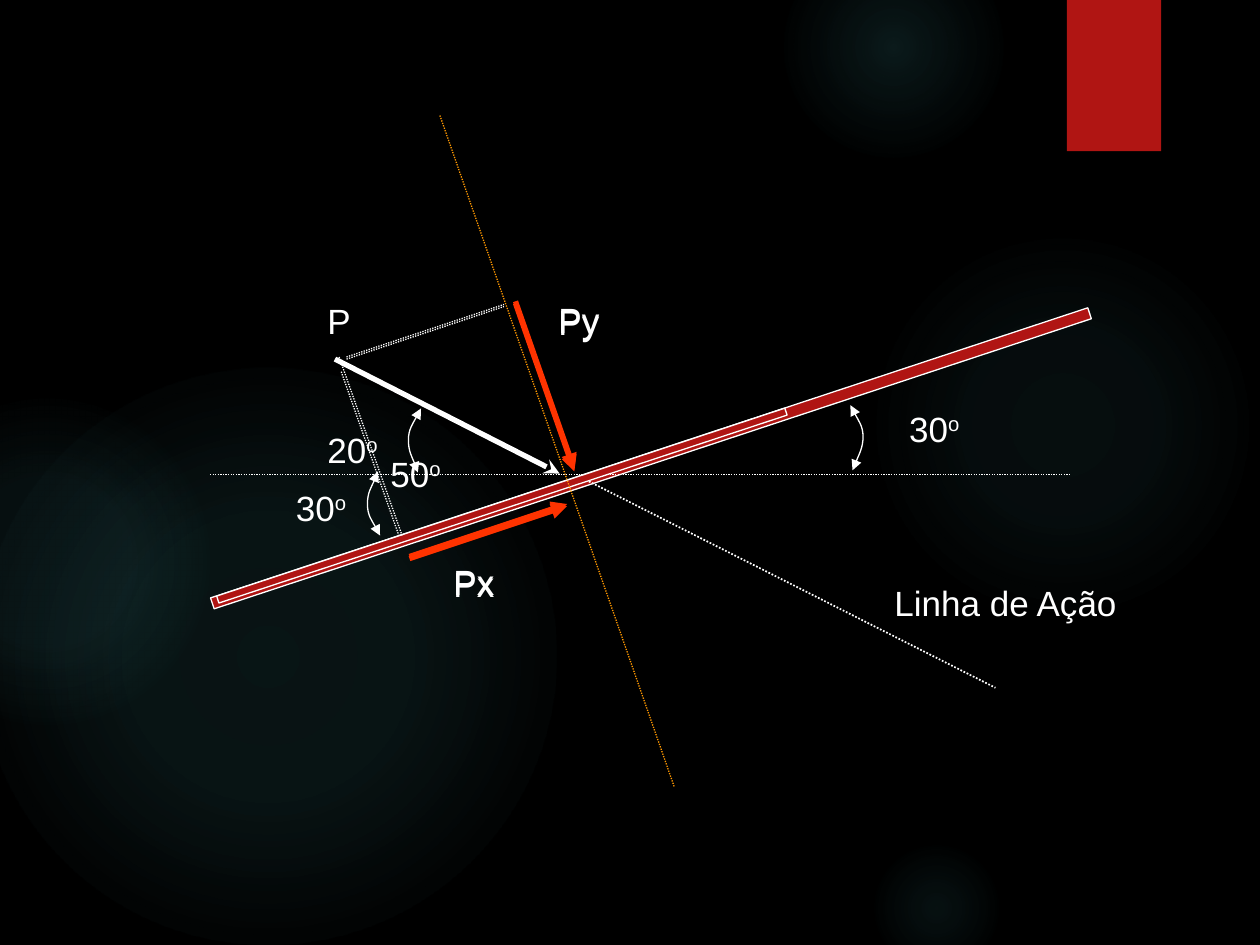
from lxml.etree import SubElement
from pptx import Presentation
from pptx.dml.color import RGBColor
from pptx.enum.dml import MSO_LINE
from pptx.enum.shapes import MSO_CONNECTOR, MSO_SHAPE
from pptx.enum.text import PP_ALIGN
from pptx.oxml import parse_xml
from pptx.oxml.ns import nsdecls, qn
from pptx.util import Inches, Pt

BLACK = RGBColor(0x00, 0x00, 0x00)
WHITE = RGBColor(0xFF, 0xFF, 0xFF)
RED = RGBColor(0xB0, 0x15, 0x13)
FIRE = RGBColor(0xFF, 0x33, 0x00)
AMBER = RGBColor(0xFF, 0x99, 0x00)
TEAL = RGBColor(0x50, 0xB9, 0xC1)
COLS, ROWS = 120, 90
WIDTH, HEIGHT = Inches(10), Inches(7.5)
TILT = -18.3


def col(n):
    """Turn grid columns into a length."""
    return round(WIDTH * n / COLS)


def row(n):
    """Turn grid rows into a length."""
    return round(HEIGHT * n / ROWS)


def add_block(slide, kind, x, y, w, h):
    """Add a plain red shape without outline or shadow."""
    shape = slide.shapes.add_shape(kind, col(x), row(y), col(w), row(h))
    shape.shadow.inherit = False
    shape.fill.solid()
    shape.fill.fore_color.rgb = RED
    shape.line.fill.background()
    return shape


def add_glow(slide, x, y, size, stops):
    """Add a round teal glow that fades outwards."""
    shape = add_block(slide, MSO_SHAPE.OVAL, x, y, size, size)
    marks = "".join(
        f'<a:gs pos="{pos * 1000}"><a:srgbClr val="{TEAL}">'
        f'<a:alpha val="{alpha * 1000}"/></a:srgbClr></a:gs>'
        for pos, alpha in stops
    )
    fill = parse_xml(
        f'<a:gradFill {nsdecls("a")} rotWithShape="1"><a:gsLst>{marks}</a:gsLst>'
        '<a:path path="circle"><a:fillToRect l="50000" t="50000" r="50000" b="50000"/>'
        "</a:path></a:gradFill>"
    )
    props = shape._element.spPr
    props.replace(props.find(qn("a:solidFill")), fill)


def add_bar(slide, x, y, w, h):
    """Add a tilted bar with a thin white edge."""
    bar = add_block(slide, MSO_SHAPE.RECTANGLE, x, y, w, h)
    bar.rotation = TILT
    bar.line.color.rgb = WHITE
    bar.line.width = Pt(0.75)


def add_tip(line, end, kind):
    """Put an arrowhead on one end of a line."""
    SubElement(line._get_or_add_ln(), qn(f"a:{end}End"), type=kind)


def add_line(slide, start, end, color=WHITE, width=0.75, tip=None):
    """Add an arrow, or a dotted line when there is no tip."""
    link = slide.shapes.add_connector(
        MSO_CONNECTOR.STRAIGHT, col(start[0]), row(start[1]), col(end[0]), row(end[1])
    )
    link.line.color.rgb = color
    link.line.width = Pt(width)
    if tip:
        add_tip(link.line, "tail", tip)
    else:
        link.line.dash_style = MSO_LINE.ROUND_DOT
    SubElement(link._element.spPr, qn("a:effectLst"))


def add_arc(slide, points):
    """Add a curve with two arrowheads from a start and Bezier triples."""
    spots = [(col(x), row(y)) for x, y in points]
    pen = slide.shapes.build_freeform(*spots[0])
    pen.add_line_segments(spots[1:], close=False)
    arc = pen.convert_to_shape()
    arc.shadow.inherit = False
    arc.fill.background()
    arc.line.color.rgb = WHITE
    arc.line.width = Pt(0.75)
    for end in ("head", "tail"):
        add_tip(arc.line, end, "triangle")
    steps = arc._element.xpath(".//a:lnTo")
    for i in range(0, len(steps), 3):
        trio = steps[i:i + 3]
        curve = SubElement(trio[0].getparent(), qn("a:cubicBezTo"))
        for step in trio:
            curve.append(step[0])
            step.getparent().remove(step)


def add_label(slide, x, y, text, power="", w=8):
    """Add a white label with an optional raised ending."""
    box = slide.shapes.add_textbox(col(x), row(y), col(w), row(5.2))
    box.text_frame.word_wrap = True
    para = box.text_frame.paragraphs[0]
    para.alignment = PP_ALIGN.JUSTIFY
    for part in filter(None, (text, power)):
        run = para.add_run()
        run.text = part
        run.font.size = Pt(20)
        run.font.name = "Arial"
        run.font.color.rgb = WHITE
    if power:
        run.font._element.set("baseline", "30000")


def add_parts(slide, lift, top, foot):
    """Add the two parts of the force, raised by some rows."""
    add_line(slide, (33, 34.2 - lift), (48, 29.2 - lift))
    add_line(slide, (49.1, 28.9 - lift), (54.7, 44.9 - lift), FIRE, 3, "triangle")
    add_line(slide, (39, 53.2 - lift), (54, 48.2 - lift), FIRE, 3, "triangle")
    add_label(slide, 42, 53 - lift, "Px")
    add_label(slide, 52, 28 - lift, "Py")
    add_line(slide, top, foot)


def add_scene(slide):
    """Add the backdrop of glows and the red tab."""
    slide.background.fill.solid()
    slide.background.fill.fore_color.rgb = BLACK
    glows = (
        (82.7, 22, 37, (7, 6), 69),
        (74.6, -6, 21, (14, 7), 73),
        (82.7, 80, 13, (9, 5), 66),
        (-2, 35, 55, (11, 10), 75),
        (-11, 38, 31, (8, 8), 72),
    )
    for x, y, size, (core, mid), edge in glows:
        add_glow(slide, x, y, size, ((0, core), (36, mid), (edge, 0)))
    add_block(slide, MSO_SHAPE.RECTANGLE, 101.6, 0, 9, 14.4)


def main():
    """Build the slide and save it."""
    deck = Presentation()
    deck.slide_width, deck.slide_height = WIDTH, HEIGHT
    slide = deck.slides.add_slide(deck.slide_layouts[6])
    add_scene(slide)
    add_label(slide, 27, 45.7, "30", "o")
    add_arc(slide, ((36.2, 51), (36, 50.5), (35, 49.1), (35, 48),
                    (35, 46.9), (35.8, 45.6), (36, 44.9)))
    add_label(slide, 30, 27.9, "P")
    add_bar(slide, 18, 43.1, 88, 1.1)
    add_line(slide, (20, 45.2), (102, 45.2))
    add_label(slide, 85.4, 38.2, "30", "o")
    add_label(slide, 30, 40.2, "20", "o")
    add_arc(slide, ((81, 38.6), (81.2, 39.1), (82.2, 40.6), (82.2, 41.6),
                    (82.2, 42.6), (81.5, 44), (81.2, 44.8)))
    add_arc(slide, ((39.8, 45), (39.7, 44.5), (38.9, 43), (38.9, 41.9),
                    (38.9, 40.9), (39.8, 39.5), (40.1, 38.9)))
    add_line(slide, (55.2, 45.4), (94.8, 65.5), width=1)
    add_label(slide, 84, 54.8, "Linha de Ação", w=26)
    add_parts(slide, 0, (32.5, 35.4), (38.2, 51.6))
    add_line(slide, (31.9, 34.2), (53.3, 45.1), WHITE, 3, "stealth")
    add_bar(slide, 19.3, 47.8, 57, 0.7)
    add_label(slide, 36, 42.5, "50", "o")
    add_line(slide, (41.9, 11), (64.2, 74.9), AMBER)
    add_parts(slide, 0.2, (32.3, 34), (38.3, 51))
    deck.save("out.pptx")


if __name__ == "__main__":
    main()
